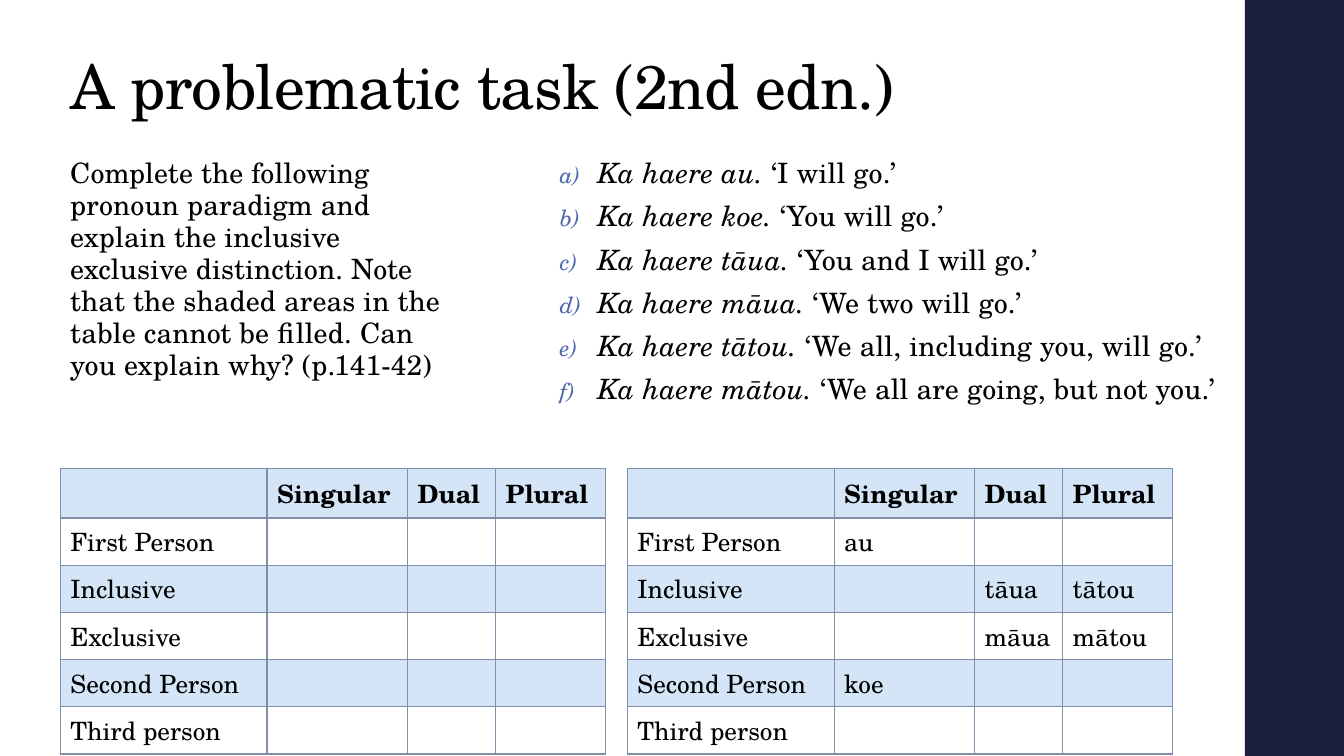
from lxml.etree import SubElement
from pptx import Presentation
from pptx.dml.color import RGBColor
from pptx.enum.shapes import MSO_SHAPE as Shape
from pptx.enum.text import MSO_ANCHOR as Anchor, PP_ALIGN as Align
from pptx.oxml.ns import qn
from pptx.util import Cm, Pt

COLUMNS = (5.21, 3.54, 2.22, 2.77)
HEADER_HEIGHT, ROW_HEIGHT = 1.24, 1.19
HEADINGS = ("", "Singular", "Dual", "Plural")
PERSONS = ("First Person", "Inclusive", "Exclusive", "Second Person", "Third person")
ANSWERS = {
    "First Person": ("au", "", ""),
    "Inclusive": ("", "tāua", "tātou"),
    "Exclusive": ("", "māua", "mātou"),
    "Second Person": ("koe", "", ""),
}
EXAMPLES = (
    ("Ka haere au. ", "‘I will go.’"),
    ("Ka haere koe. ", "‘You will go.’"),
    ("Ka haere tāua. ", "‘You and I will go.’"),
    ("Ka haere māua. ", "‘We two will go.’"),
    ("Ka haere tātou. ", "‘We all, including you, will go.’"),
    ("Ka haere mātou. ", "‘We all are going, but not you.’"),
)
TASK = (
    "Complete the following pronoun paradigm and explain the inclusive exclusive "
    "distinction. Note that the shaded areas in the table cannot be filled. "
    "Can you explain why? (p.141-42)"
)


def rgb(code):
    return RGBColor.from_string(code)


def apply(target, values):
    for name, value in values.items():
        setattr(target, name, value)


def add_xml(parent, tag, **attributes):
    return SubElement(parent, qn(tag), attributes)


class SlideBuilder:
    font = "TeX Gyre Schola"
    ink, navy, accent = "000000", "1B1E3E", "4A66AC"
    band, paper, grid = "D4E5F7", "FFFFFF", "7F8FA9"

    def __init__(self, slide):
        self.slide = slide

    def run(self, paragraph, text, size, tracking=0, **font_values):
        run = paragraph.add_run()
        run.text = text
        apply(run.font, {"name": self.font, "size": Pt(size), **font_values})
        run.font.color.rgb = rgb(self.ink)
        if tracking:
            run.font._element.set("spc", str(tracking))

    def title(self, text, left, top, width, height):
        title = self.slide.shapes.title
        apply(title, {"left": Cm(left), "top": Cm(top),
                      "width": Cm(width), "height": Cm(height)})
        apply(title.text_frame, {"word_wrap": True, "vertical_anchor": Anchor.BOTTOM})
        paragraph = title.text_frame.paragraphs[0]
        apply(paragraph, {"alignment": Align.LEFT, "line_spacing": 0.9})
        self.run(paragraph, text, 44, tracking=-50)

    def sidebar(self, left, top, width, height):
        bar = self.slide.shapes.add_shape(
            Shape.RECTANGLE, Cm(left), Cm(top), Cm(width), Cm(height))
        bar.shadow.inherit = False
        bar.fill.solid()
        bar.fill.fore_color.rgb = rgb(self.navy)
        bar.line.fill.background()

    def text_frame(self, left, top, width, height):
        box = self.slide.shapes.add_textbox(Cm(left), Cm(top), Cm(width), Cm(height))
        box.text_frame.word_wrap = True
        return box.text_frame

    def body(self, text, *place):
        paragraph = self.text_frame(*place).paragraphs[0]
        apply(paragraph, {"line_spacing": 0.95, "space_after": Pt(2)})
        self.run(paragraph, text, 20, tracking=10)

    def lettered_list(self, examples, *place):
        frame = self.text_frame(*place)
        for index, (sentence, gloss) in enumerate(examples):
            paragraph = frame.add_paragraph() if index else frame.paragraphs[0]
            apply(paragraph, {"line_spacing": 0.95, "space_before": Pt(6),
                              "space_after": Pt(2)})
            indent = Cm(0.95)
            props = paragraph._p.get_or_add_pPr()
            props.set("marL", str(indent))
            props.set("indent", str(-indent))
            add_xml(add_xml(props, "a:buClr"), "a:srgbClr", val=self.accent)
            add_xml(props, "a:buSzPct", val="80000")
            add_xml(props, "a:buAutoNum", type="alphaLcParenR")
            self.run(paragraph, sentence, 20, tracking=10, italic=True)
            self.run(paragraph, gloss, 20, tracking=10, italic=False)

    def cell(self, cell, text, row):
        """Format one cell; even rows are banded, the header has a heavy rule below."""
        widths = {"L": 1, "R": 1, "T": 2 if row == 1 else 1, "B": 1 if row else 2}
        props = cell._tc.get_or_add_tcPr()
        for side, width in widths.items():
            line = add_xml(props, f"a:ln{side}", w=str(Pt(width)))
            add_xml(add_xml(line, "a:solidFill"), "a:srgbClr", val=self.grid)
        cell.fill.solid()
        cell.fill.fore_color.rgb = rgb(self.paper if row % 2 else self.band)
        cell.vertical_anchor = Anchor.MIDDLE
        if text:
            self.run(cell.text_frame.paragraphs[0], text, 18, bold=row == 0)

    def paradigm(self, left, top, answers):
        rows = [HEADINGS] + [(person, *answers.get(person, ("",) * 3))
                             for person in PERSONS]
        heights = [HEADER_HEIGHT] + [ROW_HEIGHT] * len(PERSONS)
        table = self.slide.shapes.add_table(
            len(rows), len(COLUMNS), Cm(left), Cm(top),
            Cm(sum(COLUMNS)), Cm(sum(heights))).table
        table.horz_banding = False
        for column, width in zip(table.columns, COLUMNS):
            column.width = Cm(width)
        for index, (values, height) in enumerate(zip(rows, heights)):
            table.rows[index].height = Cm(height)
            for cell, text in zip(table.rows[index].cells, values):
                self.cell(cell, text, index)


def main():
    deck = Presentation()
    apply(deck, {"slide_width": Cm(33.87), "slide_height": Cm(19.05)})
    builder = SlideBuilder(deck.slides.add_slide(deck.slide_layouts[5]))
    builder.sidebar(31.37, 0, 2.5, 19.05)
    builder.title("A problematic task (2nd edn.)", 1.52, 1.04, 26.21, 2.18)
    builder.body(TASK, 1.52, 3.86, 10.46, 7.37)
    builder.lettered_list(EXAMPLES, 13.86, 3.86, 17.05, 7.37)
    builder.paradigm(1.52, 11.81, {})
    builder.paradigm(15.81, 11.81, ANSWERS)
    deck.save("out.pptx")


if __name__ == "__main__":
    main()
